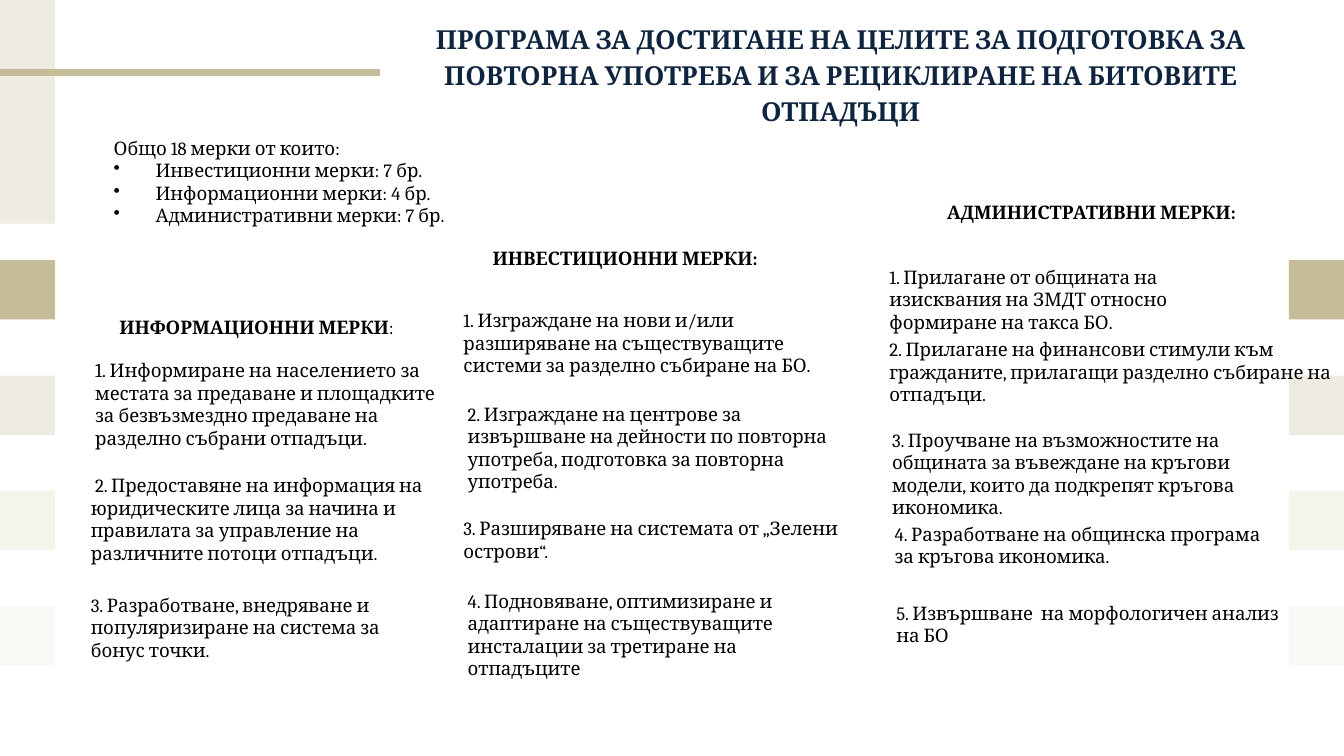
from lxml import etree
from pptx import Presentation
from pptx import util as u
from pptx.dml.color import RGBColor
from pptx.enum import shapes, text
from pptx.oxml import ns

FONT = "Cambria"
NAVY = RGBColor(0x0F, 0x24, 0x3E)
BLACK = RGBColor(0, 0, 0)
TAN = RGBColor(0xC4, 0xBD, 0x97)
BEIGE = RGBColor(0xEE, 0xEC, 0xE1)
PALE = RGBColor(0xF4, 0xF3, 0xEC)
FAINT = RGBColor(0xF9, 0xF9, 0xF5)

presentation = Presentation()
presentation.slide_width = u.Cm(25.4)
presentation.slide_height = u.Cm(14.29)
slide = presentation.slides.add_slide(presentation.slide_layouts[6])


def add_block(left, top, height, color):
    block = slide.shapes.add_shape(
        shapes.MSO_SHAPE.RECTANGLE, u.Cm(left), u.Cm(top), u.Cm(1.04), u.Cm(height))
    block.shadow.inherit = False
    block.fill.solid()
    block.fill.fore_color.rgb = color
    block.line.fill.background()


def add_text(box, lines, size=10, color=BLACK, bold=False, centered=False, wrap=True):
    """Add a text box with one paragraph per line; a line is a list of runs."""
    shape = slide.shapes.add_textbox(*[u.Cm(length) for length in box])
    frame = shape.text_frame
    frame.word_wrap = wrap
    frame.auto_size = text.MSO_AUTO_SIZE.SHAPE_TO_FIT_TEXT
    for index, runs in enumerate(lines):
        paragraph = frame.add_paragraph() if index else frame.paragraphs[0]
        if len(runs) == 1:
            paragraph.text = runs[0]
        else:
            for part in runs:
                paragraph.add_run().text = part
        if centered:
            paragraph.alignment = text.PP_ALIGN.CENTER
        paragraph.font.name = FONT
        paragraph.font.size = u.Pt(size)
        paragraph.font.bold = bold
        paragraph.font.color.rgb = color
    return frame.paragraphs


# Side decoration
add_block(0, 0, 4.23, BEIGE)
for row, color in enumerate([TAN, BEIGE, PALE, FAINT]):
    for left in (0, 24.36):
        add_block(left, 4.92 + 2.18 * row, 1.12, color)

rule = slide.shapes.add_connector(
    shapes.MSO_CONNECTOR.STRAIGHT, u.Cm(0), u.Cm(1.37), u.Cm(7.19), u.Cm(1.37))
rule.line.color.rgb = TAN
rule.line.width = u.Pt(3.75)
etree.SubElement(rule.element.spPr, ns.qn("a:effectLst"))

# Title and summary
title = add_text(
    (7.19, 0.23, 17.4, 2.31),
    [["ПРОГРАМА ЗА ДОСТИГАНЕ НА ЦЕЛИТЕ ЗА ПОДГОТОВКА ЗА ПОВТОРНА УПОТРЕБА "
      "И ЗА РЕЦИКЛИРАНЕ НА БИТОВИТЕ ОТПАДЪЦИ"]],
    size=14, color=NAVY, bold=True, centered=True)
title[0].line_spacing = 1.15

summary = add_text(
    (1.9, 2.46, 12.7, 1.96),
    [["Общо 18 мерки от които:"],
     ["Инвестиционни мерки: 7 бр."],
     ["Информационни мерки: 4 бр."],
     ["Административни мерки: 7 бр."]])
for paragraph in summary[1:]:
    properties = paragraph._p.get_or_add_pPr()
    properties.set("marL", str(u.Cm(0.79)))
    properties.set("indent", str(-u.Cm(0.79)))
    bullet = etree.Element(ns.qn("a:buChar"), char="•")
    properties.insert(0, bullet)

# Column headings
information_heading = add_text(
    (1.98, 5.84, 5.74, 0.69), [["ИНФОРМАЦИОННИ МЕРКИ", ":"]],
    bold=True, centered=True, wrap=False)
information_heading[0].runs[1].font.bold = False
for box, heading in [
    ((9.02, 4.55, 5.59, 0.69), "ИНВЕСТИЦИОННИ МЕРКИ:"),
    ((17.63, 3.68, 5.99, 0.69), "АДМИНИСТРАТИВНИ МЕРКИ:"),
]:
    add_text(box, [[heading]], bold=True, centered=True, wrap=False)

# Measures
first_measure = add_text(
    (1.55, 6.65, 7.14, 1.98),
    [["1", ". Информиране на населението за местата за предаване и площадките "
      "за безвъзмездно предаване на разделно събрани отпадъци."]])
first_measure[0].runs[0].font.size = u.Pt(10.5)

measures = [
    # Information
    ((1.47, 8.84, 7.11, 1.96),
     " 2. Предоставяне на информация на юридическите лица за начина и правилата "
     "за управление на различните потоци отпадъци."),
    ((1.47, 11.1, 6.78, 1.55),
     "3. Разработване, внедряване и популяризиране на система за бонус точки."),
    # Investment
    ((8.51, 5.72, 7.9, 1.55),
     "1. Изграждане на нови и/или разширяване на съществуващите системи "
     "за разделно събиране на БО."),
    ((8.59, 7.49, 7.39, 1.96),
     "2. Изграждане на центрове за извършване на дейности по повторна употреба, "
     "подготовка за повторна употреба."),
    ((8.51, 9.65, 8.05, 1.12),
     "3. Разширяване на системата от „Зелени острови“."),
    ((8.59, 11.02, 7.54, 1.55),
     "4. Подновяване, оптимизиране и адаптиране на съществуващите инсталации "
     "за третиране на отпадъците"),
    # Administrative
    ((16.56, 4.9, 7.59, 1.12),
     "1. Прилагане от общината на\vизисквания на ЗМДТ относно формиране на такса БО."),
    ((16.56, 6.27, 9.25, 1.55),
     "2. Прилагане на финансови стимули към гражданите, прилагащи разделно "
     "събиране на отпадъци."),
    ((16.61, 7.98, 8.05, 1.55),
     "3. Проучване на възможностите на общината за въвеждане на кръгови модели, "
     "които да подкрепят кръгова икономика."),
    ((16.66, 9.75, 7.54, 1.12),
     "4. Разработване на общинска програма за кръгова икономика."),
    ((16.69, 11.25, 7.87, 1.12),
     "5. Извършване  на морфологичен анализ на БО"),
]
for box, measure in measures:
    add_text(box, [[measure]])

presentation.save("out.pptx")
